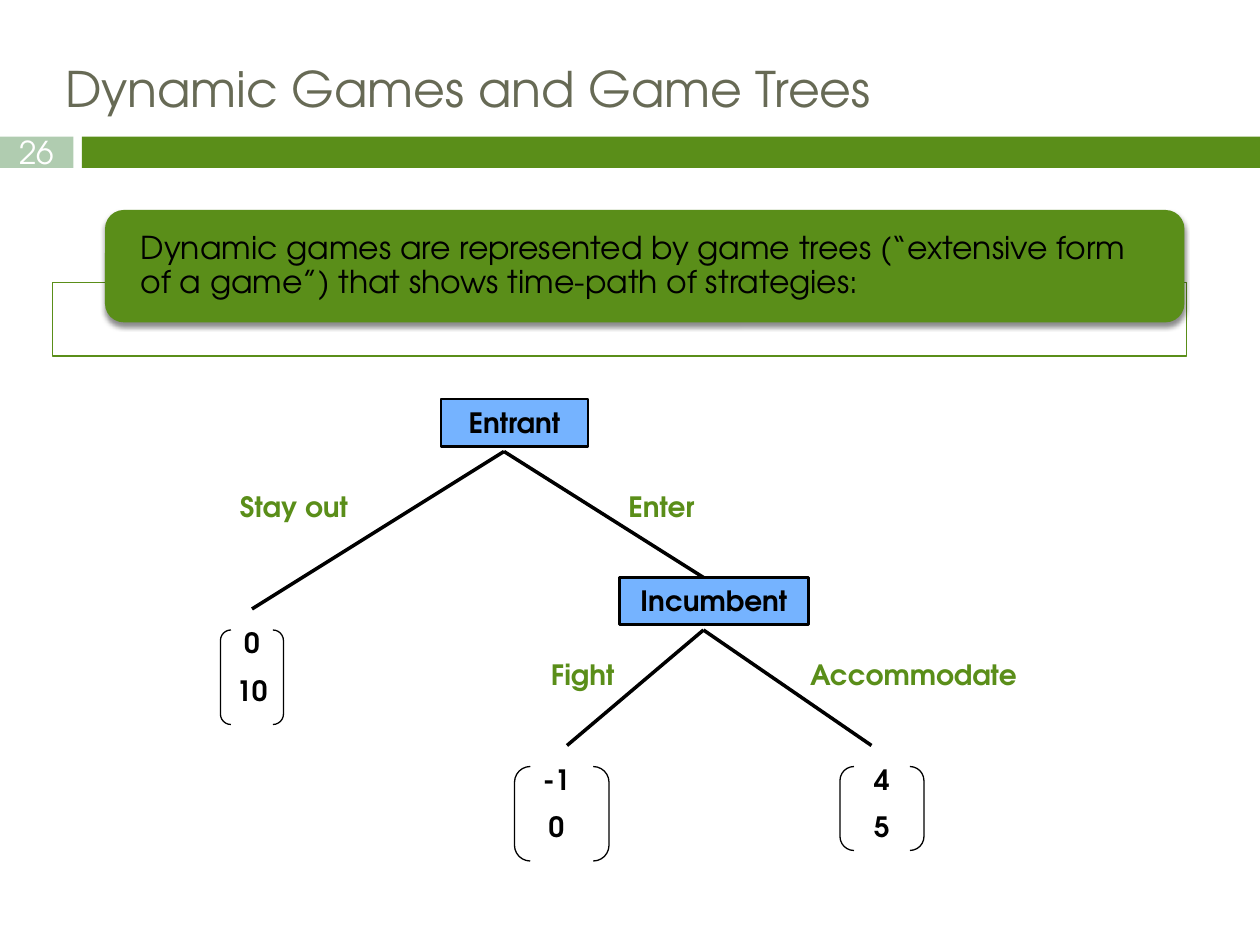
from lxml.etree import SubElement
from pptx import Presentation
from pptx.dml.color import RGBColor
from pptx.enum.shapes import MSO_CONNECTOR, MSO_SHAPE
from pptx.enum.text import MSO_ANCHOR, PP_ALIGN
from pptx.oxml.ns import qn
from pptx.util import Inches, Pt

COLORS = {
    "green": "5A8E19", "sage": "B0CCB0", "blue": "75B3FF",
    "title": "676A55", "black": "000000", "white": "FFFFFF",
}
FONT = "TeX Gyre Adventor"

deck = Presentation()
deck.slide_width, deck.slide_height = Inches(10), Inches(7.5)
COLUMN = deck.slide_width / 120
ROW = deck.slide_height / 90
slide = deck.slides.add_slide(deck.slide_layouts[5])
shapes = slide.shapes


def grid(left, top, width, height):
    return [round(v * unit) for v, unit in zip((left, top, width, height), (COLUMN, ROW) * 2)]


def write(holder, text, size=16, color="black", bold=False, align=PP_ALIGN.CENTER,
          anchor=MSO_ANCHOR.TOP, side=0.1, edge=0.05, spacing=1.0, gap=8):
    frame = holder.text_frame
    frame.word_wrap = True
    frame.vertical_anchor = anchor
    frame.margin_left = frame.margin_right = Inches(side)
    frame.margin_top = frame.margin_bottom = Inches(edge)
    frame.text = text
    for index, paragraph in enumerate(frame.paragraphs):
        paragraph.alignment = align
        paragraph.line_spacing = spacing
        paragraph.space_before = Pt(gap if index else 0)
        font = paragraph.font
        font.name, font.size, font.bold = FONT, Pt(size), bold
        font.color.rgb = RGBColor.from_string(COLORS[color])


panels = []
for preset, area, fill, line, weight in [
    (MSO_SHAPE.RECTANGLE, (7.8, 13, 112.2, 3), "green", None, 0),
    (MSO_SHAPE.RECTANGLE, (0, 13, 7, 3), "sage", None, 0),
    (MSO_SHAPE.RECTANGLE, (5, 26.9, 108, 7), "white", "green", 0.79),
    (MSO_SHAPE.ROUNDED_RECTANGLE, (10, 20, 102.8, 10.7), "green", None, 0),
    (MSO_SHAPE.RECTANGLE, (42, 38, 14, 4.5), "blue", "black", 1.5),
    (MSO_SHAPE.RECTANGLE, (59, 55, 18, 4.5), "blue", "black", 1.5),
    (MSO_SHAPE.DOUBLE_BRACKET, (21, 60, 6, 9), None, "black", 0.75),
    (MSO_SHAPE.DOUBLE_BRACKET, (49, 73, 9, 9), None, "black", 0.75),
    (MSO_SHAPE.DOUBLE_BRACKET, (80, 73, 8, 8), None, "black", 0.75),
]:
    panel = shapes.add_shape(preset, *grid(*area))
    panel.shadow.inherit = False
    if fill:
        panel.fill.solid()
        panel.fill.fore_color.rgb = RGBColor.from_string(COLORS[fill])
    else:
        panel.fill.background()
    if line:
        panel.line.color.rgb = RGBColor.from_string(COLORS[line])
        panel.line.width = Pt(weight)
    else:
        panel.line.fill.background()
    panels.append(panel)

page_number, summary, entrant, incumbent = panels[1], *panels[3:6]

summary_effects = summary._element.spPr.find(qn("a:effectLst"))
summary_shadow = SubElement(summary_effects, qn("a:outerShdw"), blurRad=str(Pt(3)),
                            dist=str(Pt(2.4)), dir="5400000", rotWithShape="0")
shadow_color = SubElement(summary_shadow, qn("a:srgbClr"), val=COLORS["black"])
SubElement(shadow_color, qn("a:alpha"), val="45000")

heading = shapes.title
heading.left, heading.top, heading.width, heading.height = grid(5, 5, 114, 7.8)
write(heading, "Dynamic Games and Game Trees", size=28, color="title", align=PP_ALIGN.LEFT)
write(page_number, "26", size=18, color="white", anchor=MSO_ANCHOR.MIDDLE, side=0, edge=0)
write(summary, "Dynamic games are represented by game trees (“extensive form of a game”) "
      "that shows time-path of strategies:", size=18, align=PP_ALIGN.LEFT,
      anchor=MSO_ANCHOR.MIDDLE, side=0.24, edge=0, spacing=0.9)
write(entrant, "Entrant", bold=True)
write(incumbent, "Incumbent", bold=True)

for start, end in [
    ((48, 43), (24, 58)), ((48, 43), (67, 55)),
    ((67, 60), (54, 71)), ((67, 60), (83, 71)),
]:
    branch = shapes.add_connector(MSO_CONNECTOR.STRAIGHT, *grid(*start, *end))
    branch.line.color.rgb = RGBColor.from_string(COLORS["black"])
    branch.line.width = Pt(2)
    SubElement(branch._element.spPr, qn("a:effectLst"))

for text, area, color in [
    ("Stay out", (15, 46, 26, 4.5), "green"),
    ("Enter", (50, 46, 26, 4.5), "green"),
    ("Fight", (46, 62, 19, 4.5), "green"),
    ("Accommodate", (75, 62, 24, 4.5), "green"),
    ("0\n10", (20, 59, 8, 9.2), "black"),
    ("-1\n0", (49, 72, 8, 9.2), "black"),
    ("4\n5", (80, 72, 8, 9.2), "black"),
]:
    write(shapes.add_textbox(*grid(*area)), text, color=color, bold=True)

deck.save("out.pptx")
